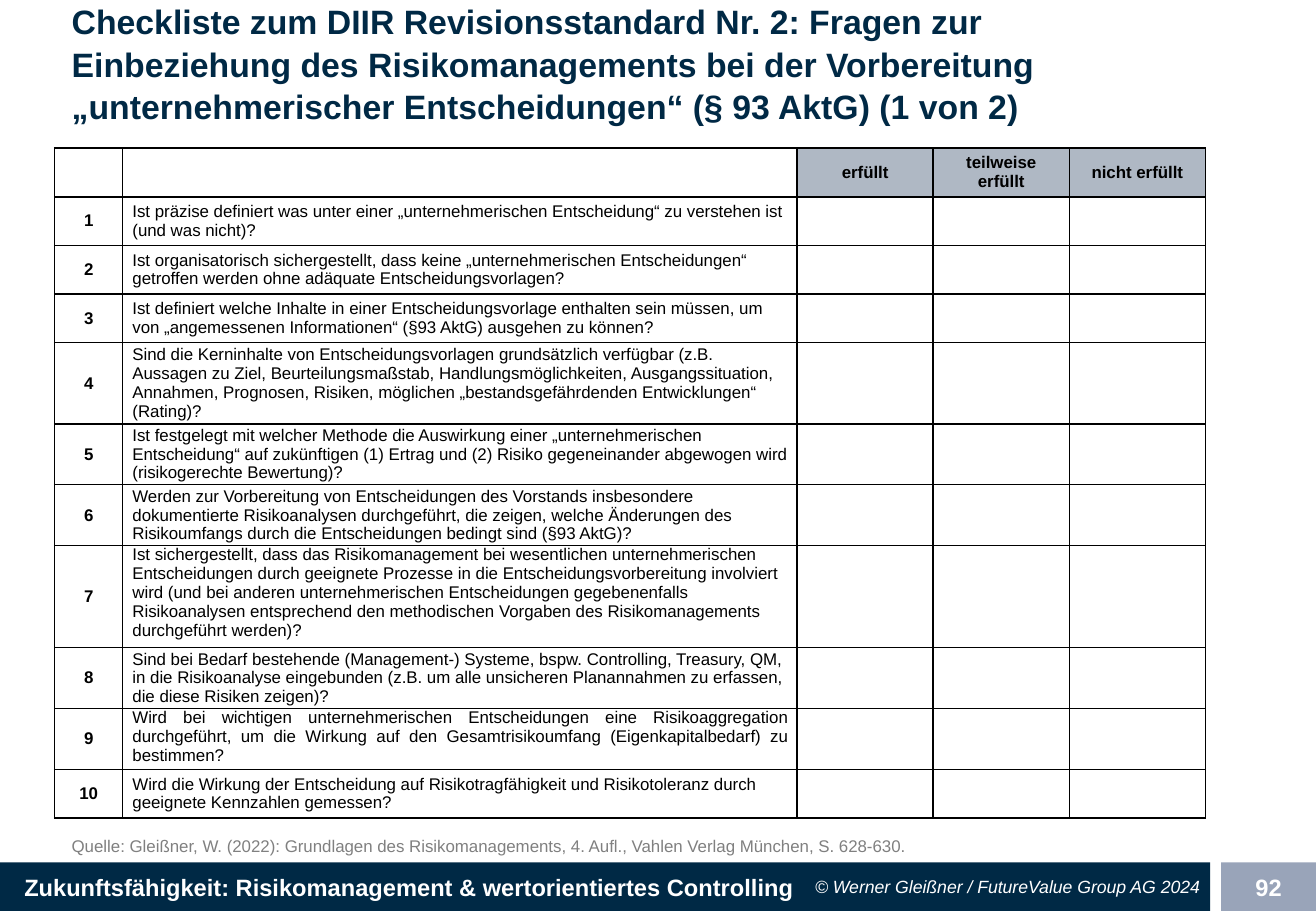
from pptx import Presentation
from pptx.dml.color import RGBColor
from pptx.enum.shapes import MSO_SHAPE
from pptx.enum.text import MSO_ANCHOR, PP_ALIGN
from pptx.oxml.ns import qn
from pptx.util import Inches, Pt
from lxml import etree

LEFT, CENTER, RIGHT, JUSTIFY = PP_ALIGN.LEFT, PP_ALIGN.CENTER, PP_ALIGN.RIGHT, PP_ALIGN.JUSTIFY
TOP, MIDDLE, BOTTOM = MSO_ANCHOR.TOP, MSO_ANCHOR.MIDDLE, MSO_ANCHOR.BOTTOM
NAVY, GREY_BLUE, HEADER_GREY, GREY = "002945", "99A4B9", "AFB8C4", "808080"
WHITE, BLACK = "FFFFFF", "000000"

TITLE = ("Checkliste zum DIIR Revisionsstandard Nr. 2: Fragen zur Einbeziehung des "
         "Risikomanagements bei der Vorbereitung „unternehmerischer Entscheidungen“ "
         "(§ 93 AktG) (1 von 2)")
SOURCE = ("Quelle: Gleißner, W. (2022): Grundlagen des Risikomanagements, 4. Aufl., "
          "Vahlen Verlag München, S. 628-630.")
FOOTER = "Zukunftsfähigkeit: Risikomanagement & wertorientiertes Controlling"
COPYRIGHT = "© Werner Gleißner / FutureValue Group AG 2024"
PAGE_NUMBER = "92"

RATINGS = ["erfüllt", "teilweise\nerfüllt", "nicht erfüllt"]
# question, row height, vertical anchor, alignment
QUESTIONS = [
    ("Ist präzise definiert was unter einer „unternehmerischen Entscheidung“ zu verstehen "
     "ist (und was nicht)?", 0.4, MIDDLE, LEFT),
    ("Ist organisatorisch sichergestellt, dass keine „unternehmerischen Entscheidungen“ "
     "getroffen werden ohne adäquate Entscheidungsvorlagen?", 0.4, MIDDLE, LEFT),
    ("Ist definiert welche Inhalte in einer Entscheidungsvorlage enthalten sein müssen, um "
     "von „angemessenen Informationen“ (§93 AktG) ausgehen zu können?", 0.4, MIDDLE, LEFT),
    ("Sind die Kerninhalte von Entscheidungsvorlagen grundsätzlich verfügbar (z.B. Aussagen "
     "zu Ziel, Beurteilungsmaßstab, Handlungsmöglichkeiten, Ausgangssituation, Annahmen, "
     "Prognosen, Risiken, möglichen „bestandsgefährdenden Entwicklungen“ (Rating)?",
     0.67, MIDDLE, LEFT),
    ("Ist festgelegt mit welcher Methode die Auswirkung einer „unternehmerischen "
     "Entscheidung“ auf zukünftigen (1) Ertrag und (2) Risiko gegeneinander abgewogen wird "
     "(risikogerechte Bewertung)?", 0.5, MIDDLE, LEFT),
    ("Werden zur Vorbereitung von Entscheidungen des Vorstands insbesondere dokumentierte "
     "Risikoanalysen durchgeführt, die zeigen, welche Änderungen des Risikoumfangs durch "
     "die Entscheidungen bedingt sind (§93 AktG)?", 0.5, MIDDLE, LEFT),
    ("Ist sichergestellt, dass das Risikomanagement bei wesentlichen unternehmerischen "
     "Entscheidungen durch geeignete Prozesse in die Entscheidungsvorbereitung involviert "
     "wird (und bei anderen unternehmerischen Entscheidungen gegebenenfalls Risikoanalysen "
     "entsprechend den methodischen Vorgaben des Risikomanagements durchgeführt werden)?",
     0.84, TOP, LEFT),
    ("Sind bei Bedarf bestehende (Management-) Systeme, bspw. Controlling, Treasury, QM, in "
     "die Risikoanalyse eingebunden (z.B. um alle unsicheren Planannahmen zu erfassen, die "
     "diese Risiken zeigen)?", 0.5, MIDDLE, LEFT),
    ("Wird bei wichtigen unternehmerischen Entscheidungen eine Risikoaggregation "
     "durchgeführt, um die Wirkung auf den Gesamtrisikoumfang (Eigenkapitalbedarf) zu "
     "bestimmen?", 0.5, TOP, JUSTIFY),
    ("Wird die Wirkung der Entscheidung auf Risikotragfähigkeit und Risikotoleranz durch "
     "geeignete Kennzahlen gemessen?", 0.4, MIDDLE, LEFT),
]
COLUMN_WIDTHS = [0.56, 5.55, 1.12, 1.12, 1.12]
HEADER_HEIGHT = 0.4


def color(value):
    return RGBColor.from_string(value)


def style(font, size, tint, bold=False, italic=False):
    font.name, font.size, font.bold, font.italic = "Arial", Pt(size), bold, italic
    font.color.rgb = color(tint)


def write(frame, text, size, tint, align=LEFT, bold=False, italic=False):
    """Fill the first paragraph; a newline becomes a line break."""
    para = frame.paragraphs[0]
    para.alignment = align
    for index, line in enumerate(text.split("\n")):
        if index:
            para.add_line_break()
        span = para.add_run()
        span.text = line
        style(span.font, size, tint, bold, italic)
    return para


def set_frame(frame, anchor, left_inset=0.08, wrap=True):
    frame.word_wrap = wrap
    frame.vertical_anchor = anchor
    frame.margin_left, frame.margin_right = Inches(left_inset), Inches(0.08)
    frame.margin_top = frame.margin_bottom = Inches(0.04)


def add_text(page, place, text, size, tint, anchor=MIDDLE, **look):
    box = page.shapes.add_textbox(*map(Inches, place))
    set_frame(box.text_frame, anchor)
    return write(box.text_frame, text, size, tint, **look)


def add_bar(page, place, fill, text, align, left_inset=0.08, wrap=True):
    bar = page.shapes.add_shape(MSO_SHAPE.RECTANGLE, *map(Inches, place))
    bar.shadow.inherit = False
    bar.fill.solid()
    bar.fill.fore_color.rgb = color(fill)
    bar.line.fill.background()
    set_frame(bar.text_frame, MIDDLE, left_inset, wrap)
    write(bar.text_frame, text, 14, WHITE, align, bold=True)


def add_borders(cell):
    properties = cell._tc.get_or_add_tcPr()
    for side in ("a:lnL", "a:lnR", "a:lnT", "a:lnB"):
        line = etree.SubElement(properties, qn(side), w=str(Pt(1)))
        fill = etree.SubElement(line, qn("a:solidFill"))
        etree.SubElement(fill, qn("a:srgbClr"), val=BLACK)


def fill_cell(cell, text, fill=WHITE, anchor=MIDDLE, align=CENTER, bold=True):
    add_borders(cell)
    cell.fill.solid()
    cell.fill.fore_color.rgb = color(fill)
    cell.vertical_anchor = anchor
    cell.margin_left = cell.margin_right = Inches(0.08)
    cell.margin_top = cell.margin_bottom = 0
    if text:
        write(cell.text_frame, text, 10, BLACK, align, bold)
    else:
        style(cell.text_frame.paragraphs[0].font, 10, BLACK)


def add_checklist(page):
    heights = [HEADER_HEIGHT] + [question[1] for question in QUESTIONS]
    table = page.shapes.add_table(
        len(heights), len(COLUMN_WIDTHS), Inches(0.45), Inches(1.22),
        Inches(sum(COLUMN_WIDTHS)), Inches(sum(heights))).table
    table.first_row = table.horz_banding = False
    for column, width in zip(table.columns, COLUMN_WIDTHS):
        column.width = Inches(width)
    for row, height in zip(table.rows, heights):
        row.height = Inches(height)

    for index, label in enumerate(["", ""] + RATINGS):
        fill_cell(table.cell(0, index), label, HEADER_GREY if label else WHITE)
    for number, (question, _, anchor, align) in enumerate(QUESTIONS, 1):
        fill_cell(table.cell(number, 0), str(number))
        fill_cell(table.cell(number, 1), question, anchor=anchor, align=align, bold=False)
        for index in range(2, len(COLUMN_WIDTHS)):
            fill_cell(table.cell(number, index), "")


def main():
    deck = Presentation()
    deck.slide_width, deck.slide_height = Inches(10.83), Inches(7.5)
    page = deck.slides.add_slide(deck.slide_layouts[6])

    add_bar(page, (0, 7.1, 9.96, 0.4), NAVY, FOOTER, LEFT, left_inset=0.2, wrap=False)
    add_bar(page, (10.05, 7.1, 0.78, 0.4), GREY_BLUE, PAGE_NUMBER, CENTER)
    add_text(page, (5.63, 7.1, 4.33, 0.4), COPYRIGHT, 10.5, WHITE, align=RIGHT, italic=True)
    title = add_text(page, (0.51, 0.16, 9.45, 0.71), TITLE, 20, NAVY, bold=True)
    title.line_spacing = 1.05
    source = add_text(page, (0.51, 5.91, 9.45, 1.18), SOURCE, 10, GREY, anchor=BOTTOM)
    source.space_after = Pt(3)
    add_checklist(page)
    deck.save("out.pptx")


if __name__ == "__main__":
    main()
